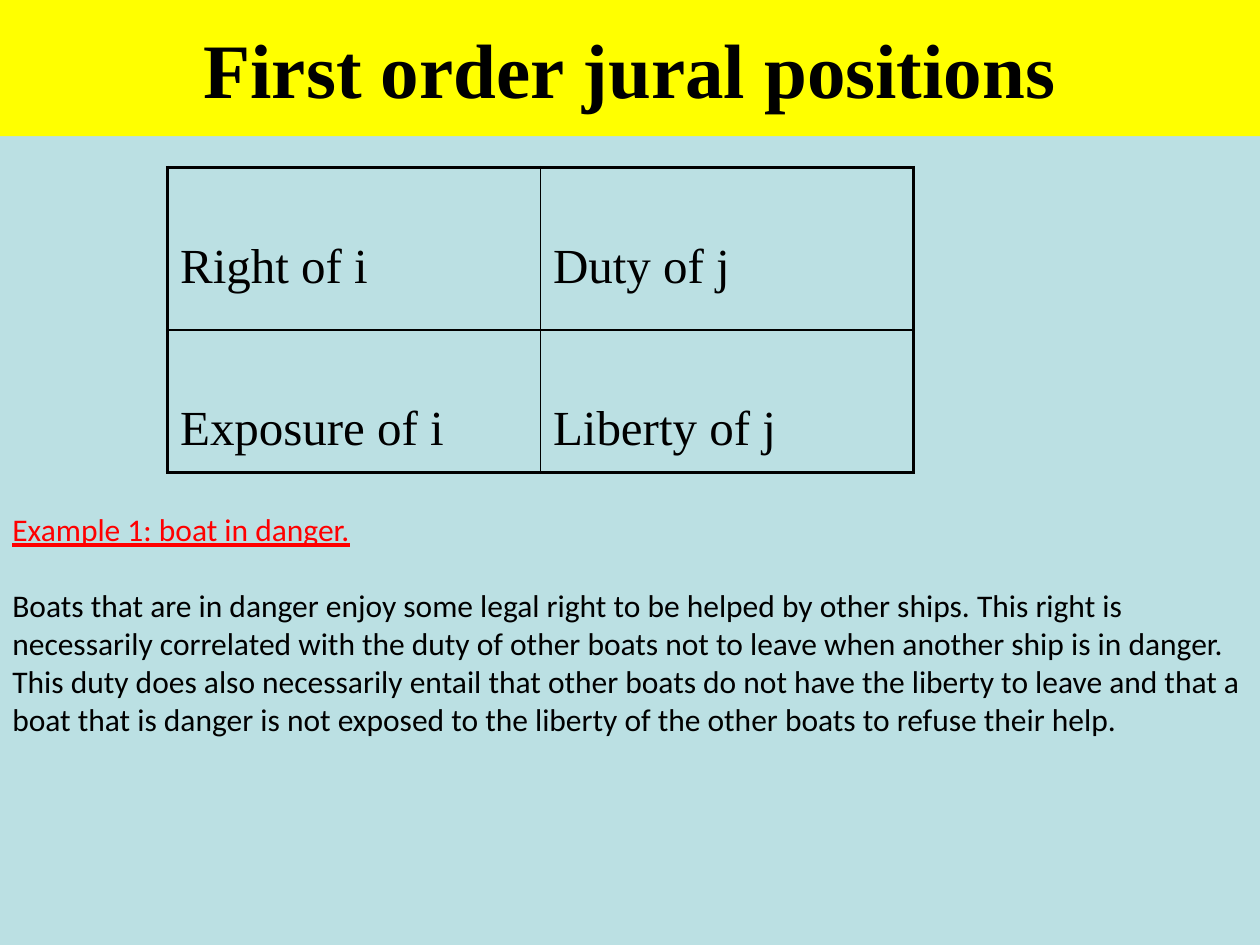
from dataclasses import dataclass

from lxml.etree import SubElement
from pptx import Presentation
from pptx.dml.color import RGBColor
from pptx.enum.text import MSO_ANCHOR, MSO_AUTO_SIZE, PP_ALIGN
from pptx.oxml.ns import qn
from pptx.util import Inches, Pt

WIDTH, HEIGHT = Inches(10), Inches(7.5)
COLORS = {"background": "BBE0E3", "banner": "FFFF00", "ink": "000000", "example": "FF0000"}
SERIF, SANS = "Times New Roman", "Calibri"
OUTER, INNER = Pt(2.25), Pt(1)


@dataclass
class Position:
    row: int
    column: int
    label: str


@dataclass
class Passage:
    text: str
    color: str
    underline: bool
    space_after: float


POSITIONS = [
    Position(0, 0, "Right of i"),
    Position(0, 1, "Duty of j"),
    Position(1, 0, "Exposure of i"),
    Position(1, 1, "Liberty of j"),
]
ROW_HEIGHTS = [1.29, 1.13]
COLUMN_WIDTHS = [2.96, 2.96]

PASSAGES = [
    Passage("Example 1: boat in danger.", "example", True, 22),
    Passage(
        "Boats that are in danger enjoy some legal right to be helped by other ships. "
        "This right is necessarily correlated with the duty of other boats not to leave "
        "when another ship is in danger. This duty does also necessarily entail that "
        "other boats do not have the liberty to leave and that a boat that is danger is "
        "not exposed to the liberty of the other boats to refuse their help.",
        "ink", False, 0),
]


def rgb(name: str) -> RGBColor:
    return RGBColor.from_string(COLORS[name])


def style(paragraph, size: float, face: str, color: str) -> None:
    font = paragraph.font
    font.size, font.name = Pt(size), face
    font.color.rgb = rgb(color)


def draw_borders(cell, row: int, column: int) -> None:
    """Thick lines around the table, thin lines between its cells."""
    outer_edges = {
        "lnL": column == 0,
        "lnR": column == len(COLUMN_WIDTHS) - 1,
        "lnT": row == 0,
        "lnB": row == len(ROW_HEIGHTS) - 1,
    }
    properties = cell._tc.get_or_add_tcPr()
    for index, (edge, is_outer) in enumerate(outer_edges.items()):
        line = SubElement(properties, qn(f"a:{edge}"), w=str(OUTER if is_outer else INNER))
        fill = SubElement(line, qn("a:solidFill"))
        SubElement(fill, qn("a:srgbClr"), val=COLORS["ink"])
        properties.insert(index, line)


def draw_title(slide, text: str) -> None:
    title = slide.shapes.title
    title.left, title.top, title.width, title.height = 0, 0, WIDTH, Inches(1.08)
    title.fill.solid()
    title.fill.fore_color.rgb = rgb("banner")
    frame = title.text_frame
    frame.text = text
    frame.auto_size = MSO_AUTO_SIZE.NONE
    frame.vertical_anchor = MSO_ANCHOR.MIDDLE
    heading = frame.paragraphs[0]
    heading.alignment = PP_ALIGN.CENTER
    style(heading, 44, SERIF, "ink")
    heading.font.bold = True


def draw_positions(slide, positions: list[Position]) -> None:
    table = slide.shapes.add_table(
        len(ROW_HEIGHTS), len(COLUMN_WIDTHS), Inches(1.33), Inches(1.33),
        Inches(sum(COLUMN_WIDTHS)), Inches(sum(ROW_HEIGHTS))).table
    table.first_row = table.horz_banding = False
    for row, height in zip(table.rows, ROW_HEIGHTS):
        row.height = Inches(height)
    for column, width in zip(table.columns, COLUMN_WIDTHS):
        column.width = Inches(width)
    for position in positions:
        cell = table.cell(position.row, position.column)
        cell.text = position.label
        cell.margin_top = Inches(0.57)
        cell.fill.background()
        label = cell.text_frame.paragraphs[0]
        label.alignment = PP_ALIGN.JUSTIFY
        style(label, 28, SERIF, "ink")
        draw_borders(cell, position.row, position.column)


def draw_example(slide, passages: list[Passage]) -> None:
    frame = slide.shapes.add_textbox(0, Inches(4), WIDTH, Inches(3.83)).text_frame
    frame.word_wrap = True
    for index, passage in enumerate(passages):
        paragraph = frame.add_paragraph() if index else frame.paragraphs[0]
        paragraph.text = passage.text
        paragraph.space_after = Pt(passage.space_after)
        style(paragraph, 18, SANS, passage.color)
        paragraph.font.underline = passage.underline


def main() -> None:
    presentation = Presentation()
    presentation.slide_width, presentation.slide_height = WIDTH, HEIGHT
    slide = presentation.slides.add_slide(presentation.slide_layouts.get_by_name("Title Only"))

    # Background
    slide.background.fill.solid()
    slide.background.fill.fore_color.rgb = rgb("background")

    # Banner, table of positions, example
    draw_title(slide, "First order jural positions")
    draw_positions(slide, POSITIONS)
    draw_example(slide, PASSAGES)

    presentation.save("out.pptx")


if __name__ == "__main__":
    main()
